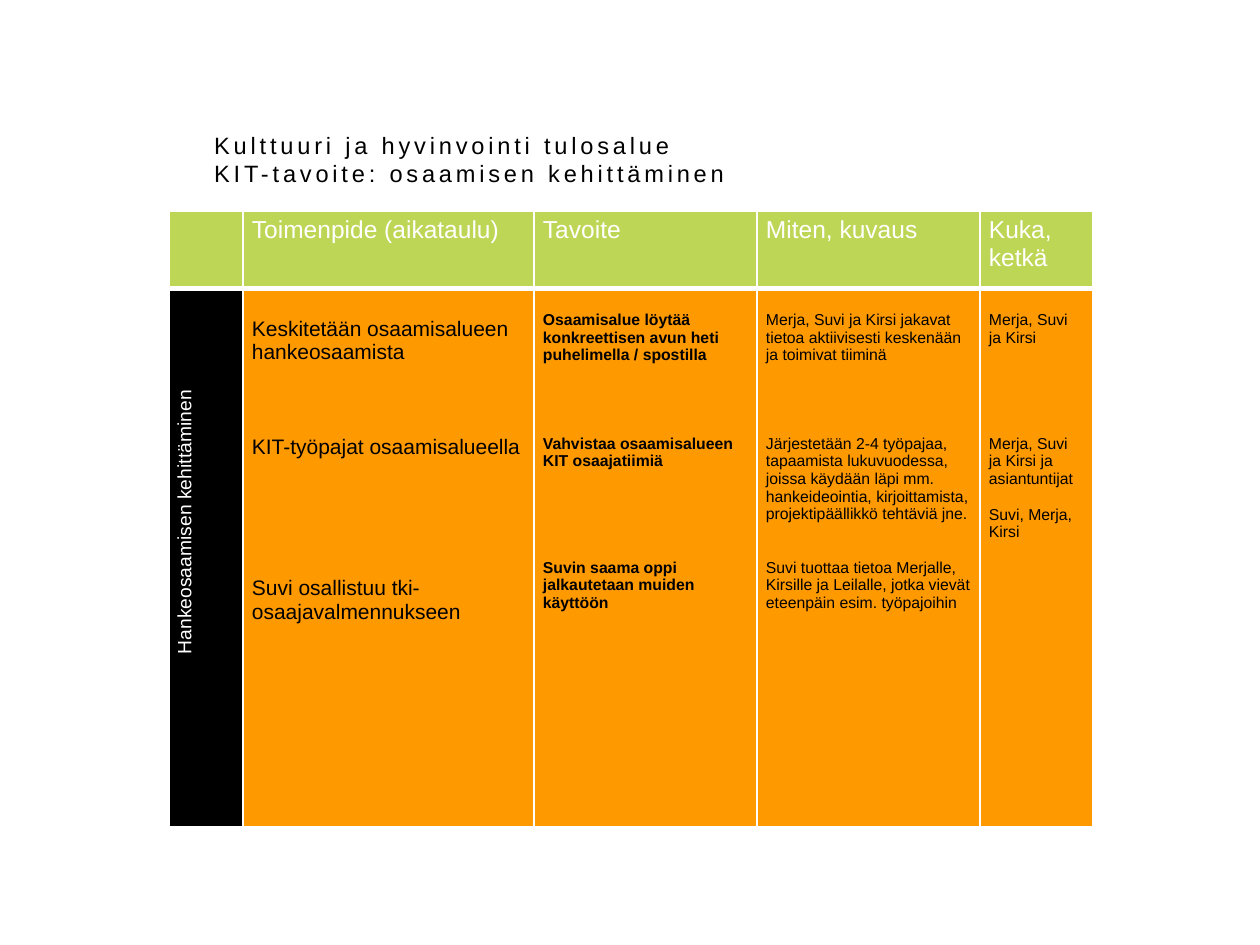
from dataclasses import dataclass

from lxml import etree
from pptx import Presentation
from pptx.dml.color import RGBColor
from pptx.enum.text import MSO_ANCHOR, PP_ALIGN
from pptx.oxml.ns import qn
from pptx.util import Inches, Pt

MIDDLE = MSO_ANCHOR.MIDDLE
CENTER = PP_ALIGN.CENTER


@dataclass(frozen=True)
class Theme:
    font: str = "Arial"
    white: str = "FFFFFF"
    black: str = "000000"
    green: str = "BED656"
    orange: str = "FF9900"
    title: float = 13.5
    header: float = 14
    label: float = 11
    action: float = 12
    detail: float = 9
    line: float = 1.124
    inset_x: float = 0.07
    inset_y: float = 0.04


TITLE = ["Kulttuuri ja hyvinvointi tulosalue", "KIT-tavoite: osaamisen kehittäminen"]
HEADERS = ["", "Toimenpide (aikataulu)", "Tavoite", "Miten, kuvaus", "Kuka, ketkä"]
SIDE_LABEL = "Hankeosaamisen kehittäminen"
COLUMN_WIDTHS = [0.59, 2.31, 1.77, 1.77, 0.89]
ROW_HEIGHTS = [0.61, 4.27]
ACTIONS = [
    (1, "Keskitetään osaamisalueen hankeosaamista"),
    (3, "KIT-työpajat osaamisalueella"),
    (5, "Suvi osallistuu tki-osaajavalmennukseen"),
]
GOALS = [
    (1, "Osaamisalue löytää konkreettisen avun heti puhelimella / spostilla"),
    (4, "Vahvistaa osaamisalueen KIT osaajatiimiä"),
    (5, "Suvin saama oppi jalkautetaan muiden käyttöön"),
]
METHODS = [
    (1, "Merja, Suvi ja Kirsi jakavat tietoa aktiivisesti keskenään ja toimivat tiiminä"),
    (4, "Järjestetään 2-4 työpajaa, tapaamista lukuvuodessa, joissa käydään läpi mm. "
        "hankeideointia, kirjoittamista, projektipäällikkö tehtäviä jne."),
    (2, "Suvi tuottaa tietoa Merjalle, Kirsille ja Leilalle, jotka vievät eteenpäin "
        "esim. työpajoihin"),
]
PEOPLE = [
    (1, "Merja, Suvi ja Kirsi"),
    (5, "Merja, Suvi ja Kirsi ja asiantuntijat"),
    (1, "Suvi, Merja, Kirsi"),
]


class SlideBuilder:
    """Holds the theme and the current slide and adds elements to it."""

    def __init__(self, prs, theme):
        self.theme = theme
        self.s = prs.slides.add_slide(prs.slide_layouts[6])

    def run(self, p, text, size, color, bold=False):
        r = p.add_run()
        r.text = text
        r.font.name = self.theme.font
        r.font.size = Pt(size)
        r.font.bold = bold
        r.font.color.rgb = RGBColor.from_string(color)
        return r

    def insets(self, target):
        target.margin_left = target.margin_right = Inches(self.theme.inset_x)
        target.margin_top = target.margin_bottom = Inches(self.theme.inset_y)

    def title(self, lines, left, top, width, height):
        box = self.s.shapes.add_textbox(Inches(left), Inches(top), Inches(width), Inches(height))
        tf = box.text_frame
        tf.word_wrap = True
        tf.vertical_anchor = MIDDLE
        self.insets(tf)
        for i, text in enumerate(lines):
            p = tf.add_paragraph() if i else tf.paragraphs[0]
            r = self.run(p, text, self.theme.title, self.theme.black)
            r.font._element.set("spc", "220")

    def table(self, left, top, widths, heights):
        shape = self.s.shapes.add_table(
            len(heights), len(widths), Inches(left), Inches(top),
            Inches(sum(widths)), Inches(sum(heights)))
        table = shape.table
        table.horz_banding = False
        for column, width in zip(table.columns, widths):
            column.width = Inches(width)
        for row, height in zip(table.rows, heights):
            row.height = Inches(height)
        return table

    def cell(self, cell, fill, bottom=1):
        self.insets(cell)
        tc_pr = cell._tc.get_or_add_tcPr()
        for tag, width in (("a:lnL", 1), ("a:lnR", 1), ("a:lnT", 1), ("a:lnB", bottom)):
            ln = etree.SubElement(tc_pr, qn(tag), w=str(Pt(width)))
            solid = etree.SubElement(ln, qn("a:solidFill"))
            etree.SubElement(solid, qn("a:srgbClr"), val=self.theme.white)
        cell.fill.solid()
        cell.fill.fore_color.rgb = RGBColor.from_string(fill)

    def header_cell(self, cell, text):
        self.cell(cell, self.theme.green, bottom=3)
        if text:
            self.run(cell.text_frame.paragraphs[0], text, self.theme.header, self.theme.white)

    def side_cell(self, cell, text, indent):
        self.cell(cell, self.theme.black)
        cell._tc.get_or_add_tcPr().set("vert", "vert270")
        p = cell.text_frame.paragraphs[0]
        p.alignment = CENTER
        p._p.get_or_add_pPr().set("marL", str(Inches(indent)))
        self.run(p, text, self.theme.label, self.theme.white)

    def list_cell(self, cell, items, size, bold=False):
        self.cell(cell, self.theme.orange)
        tf = cell.text_frame
        for i, (gap_lines, text) in enumerate(items):
            gap = Pt(gap_lines * size * self.theme.line)
            p = tf.add_paragraph() if i else tf.paragraphs[0]
            if i:
                p.space_before = gap
            else:
                cell.margin_top = Inches(self.theme.inset_y) + gap
            self.run(p, text, size, self.theme.black, bold)


def main():
    prs = Presentation()
    prs.slide_width, prs.slide_height = Inches(10), Inches(7.5)
    theme = Theme()
    slide = SlideBuilder(prs, theme)

    table = slide.table(1.34, 1.68, COLUMN_WIDTHS, ROW_HEIGHTS)
    for column, text in enumerate(HEADERS):
        slide.header_cell(table.cell(0, column), text)
    slide.side_cell(table.cell(1, 0), SIDE_LABEL, indent=0.56)
    slide.list_cell(table.cell(1, 1), ACTIONS, theme.action)
    for column, items in enumerate((GOALS, METHODS, PEOPLE), start=2):
        slide.list_cell(table.cell(1, column), items, theme.detail, bold=items is GOALS)

    slide.title(TITLE, 1.63, 1.15, 6.75, 0.22)
    prs.save("out.pptx")


if __name__ == "__main__":
    main()
